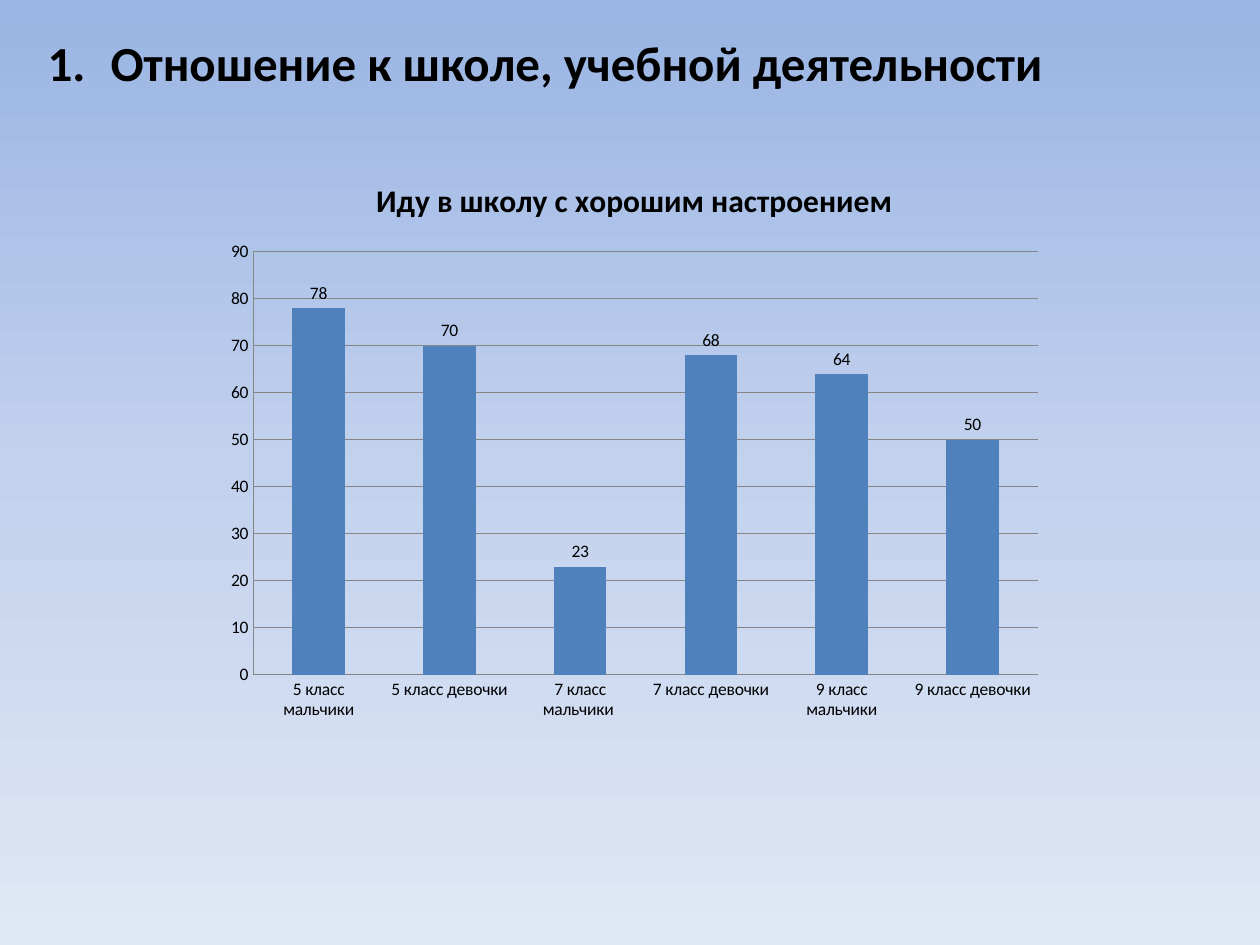
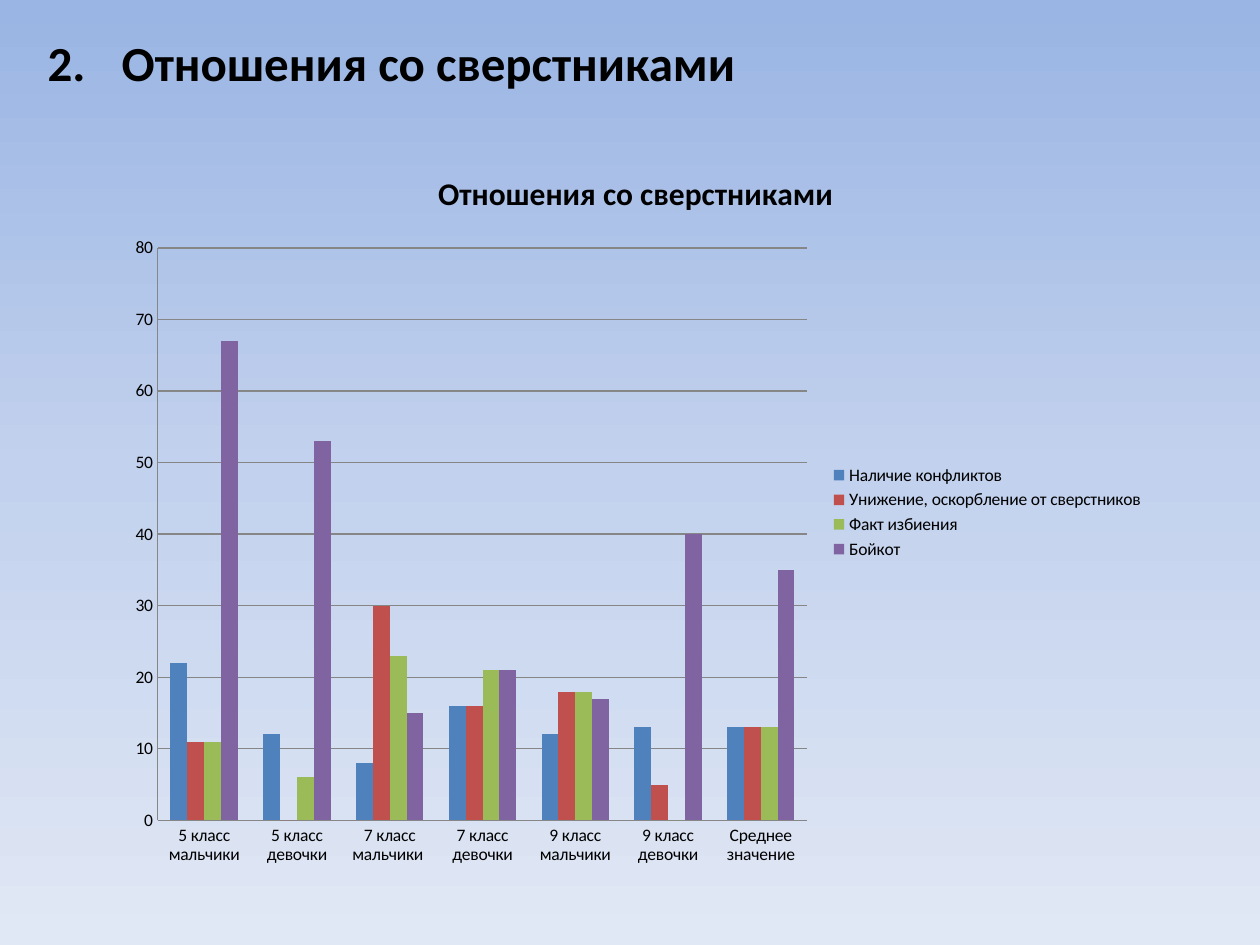
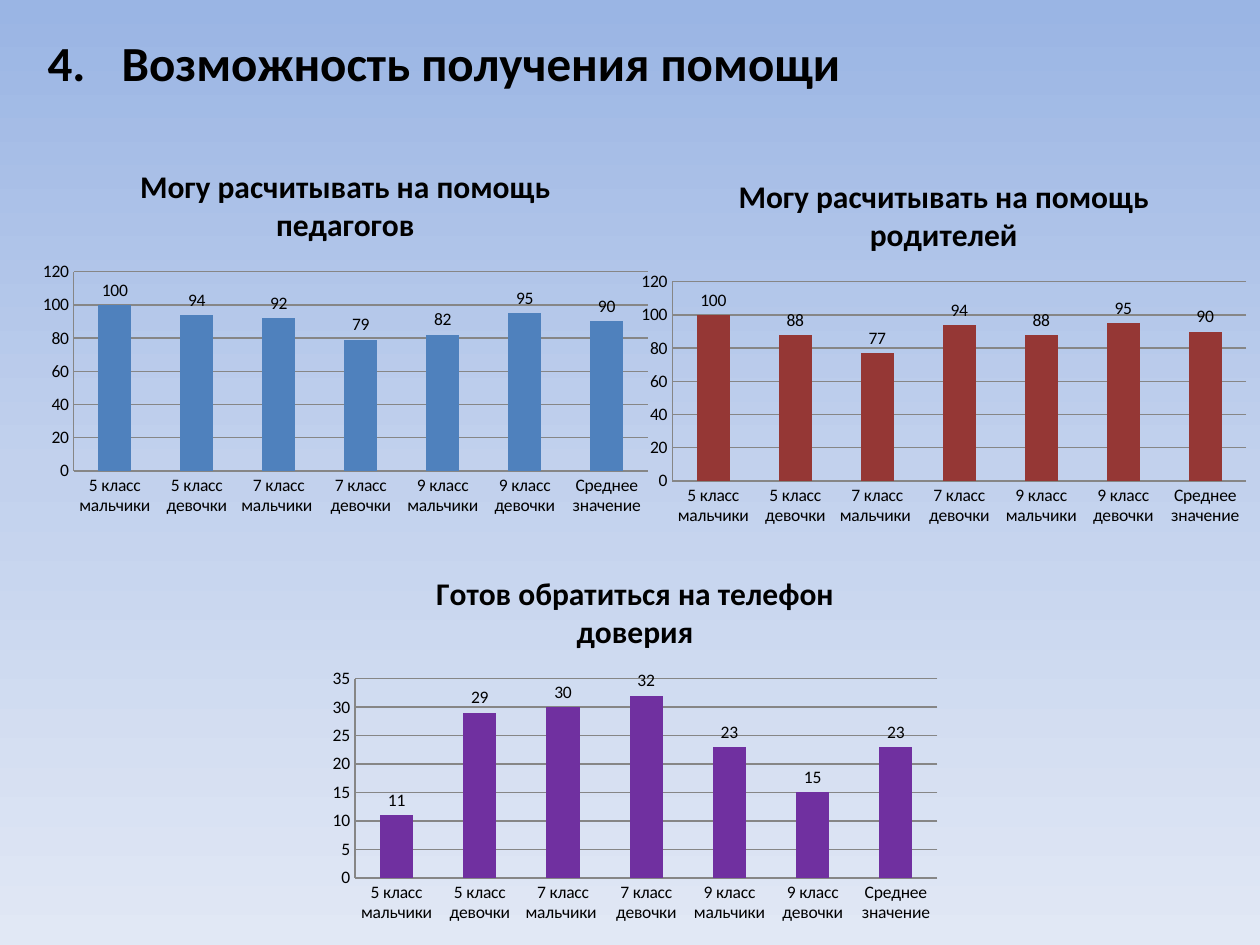
from copy import deepcopy
from dataclasses import dataclass

from pptx import Presentation
from pptx.chart.data import CategoryChartData
from pptx.dml.color import RGBColor
from pptx.enum.chart import (
    XL_CHART_TYPE, XL_LABEL_POSITION, XL_LEGEND_POSITION, XL_TICK_MARK)
from pptx.enum.text import MSO_AUTO_SIZE
from pptx.oxml.ns import qn
from pptx.util import Inches, Pt


@dataclass(frozen=True)
class Theme:
    font: str = "Calibri"
    head: int = 28
    title: int = 18
    small: int = 10
    ink: str = "000000"
    rule: str = "868686"
    sky: tuple = ((0, "9AB5E4"), (0.5, "C2D1ED"), (1, "E1E8F5"))
    blue: str = "4F81BD"
    red: str = "C0504D"
    green: str = "9BBB59"
    mauve: str = "8064A2"
    brick: str = "953735"
    violet: str = "7030A0"


THEME = Theme()
GROUPS = ["5 класс мальчики", "5 класс девочки", "7 класс мальчики ",
          "7 класс девочки", "9 класс мальчики", "9 класс девочки"]
WITH_MEAN = GROUPS + ["Среднее значение"]


class Deck:
    def __init__(self, theme):
        self.theme = theme
        self.prs = Presentation()
        self.prs.slide_width, self.prs.slide_height = Inches(10), Inches(7.5)
        self.slide = None

    def page(self, head):
        self.slide = self.prs.slides.add_slide(self.prs.slide_layouts[6])
        self.sky()
        self.head(head)

    def sky(self):
        """Fill the background from top to bottom."""
        fill = self.slide.background.fill
        fill.gradient()
        fill.gradient_angle = 270
        stops = self.slide.element.find(".//" + qn("a:gsLst"))
        stops.insert(1, deepcopy(stops[0]))
        for stop, (place, color) in zip(fill.gradient_stops, self.theme.sky):
            stop.position = place
            stop.color.rgb = RGBColor.from_string(color)

    def style(self, font, size, bold=False):
        font.name, font.size, font.bold = self.theme.font, Pt(size), bold
        font.color.rgb = RGBColor.from_string(self.theme.ink)

    def head(self, text):
        box = self.slide.shapes.add_textbox(
            Inches(0.28), Inches(0.21), Inches(9.53), Inches(0.57))
        frame = box.text_frame
        frame.word_wrap = True
        frame.auto_size = MSO_AUTO_SIZE.SHAPE_TO_FIT_TEXT
        run = frame.paragraphs[0].add_run()
        run.text = text
        self.style(run.font, self.theme.head, True)

    def chart(self, box, title, groups, series, legend=False):
        """Add a column chart; series holds (name, color, values) rows."""
        data = CategoryChartData()
        data.categories = groups
        for name, _, values in series:
            data.add_series(name, values)
        chart = self.slide.shapes.add_chart(
            XL_CHART_TYPE.COLUMN_CLUSTERED, *map(Inches, box), data).chart
        self.style(chart.font, self.theme.small)

        run = chart.chart_title.text_frame.paragraphs[0].add_run()
        run.text = title
        self.style(run.font, self.theme.title, True)
        chart.chart_title.include_in_layout = False

        chart.has_legend = legend
        if legend:
            chart.legend.position = XL_LEGEND_POSITION.RIGHT
            chart.legend.include_in_layout = False

        chart.value_axis.has_major_gridlines = True
        self.rule(chart.value_axis.major_gridlines)
        for axis in (chart.category_axis, chart.value_axis):
            axis.major_tick_mark = axis.minor_tick_mark = XL_TICK_MARK.NONE
            self.rule(axis)

        plot = chart.plots[0]
        plot.gap_width, plot.overlap = 150, 0
        plot.vary_by_categories = False
        for bars, (_, color, _) in zip(plot.series, series):
            bars.format.fill.solid()
            bars.format.fill.fore_color.rgb = RGBColor.from_string(color)
        if not legend:
            plot.has_data_labels = True
            plot.data_labels.show_value = True
            plot.data_labels.position = XL_LABEL_POSITION.OUTSIDE_END
            self.style(plot.data_labels.font, self.theme.small)

    def rule(self, part):
        line = part.format.line
        line.color.rgb = RGBColor.from_string(self.theme.rule)
        line.width = Pt(0.75)

    def bars(self, box, title, groups, color, values):
        self.chart(box, title, groups, [("Series 1", color, values)])


def main():
    deck = Deck(THEME)

    deck.page("1.\tОтношение к школе, учебной деятельности")
    deck.bars((1.7, 1.23, 6.67, 4.57), "Иду в школу с хорошим настроением",
              GROUPS, THEME.blue, (78, 70, 23, 68, 64, 50))

    deck.page("2.\t Отношения со сверстниками")
    deck.chart((0.91, 1.15, 8.27, 5.83), "Отношения со сверстниками", WITH_MEAN, [
        ("Наличие конфликтов", THEME.blue, (22, 12, 8, 16, 12, 13, 13)),
        ("Унижение, оскорбление от сверстников", THEME.red,
         (11, 0, 30, 16, 18, 5, 13)),
        ("Факт избиения", THEME.green, (11, 6, 23, 21, 18, 0, 13)),
        ("Бойкот", THEME.mauve, (67, 53, 15, 21, 17, 40, 35)),
    ], legend=True)

    deck.page("4.\t Возможность получения помощи")
    for left, top, title, color, values in (
        (0.24, 1.15, "Могу расчитывать на помощь педагогов", THEME.blue,
         (100, 94, 92, 79, 82, 95, 90)),
        (4.99, 1.23, "Могу расчитывать на помощь родителей", THEME.brick,
         (100, 88, 77, 94, 88, 95, 90)),
        (2.54, 4.38, "Готов обратиться на телефон доверия", THEME.violet,
         (11, 29, 30, 32, 23, 15, 23)),
    ):
        deck.bars((left, top, 5, 3), title, WITH_MEAN, color, values)

    deck.prs.save("out.pptx")


if __name__ == "__main__":
    main()
